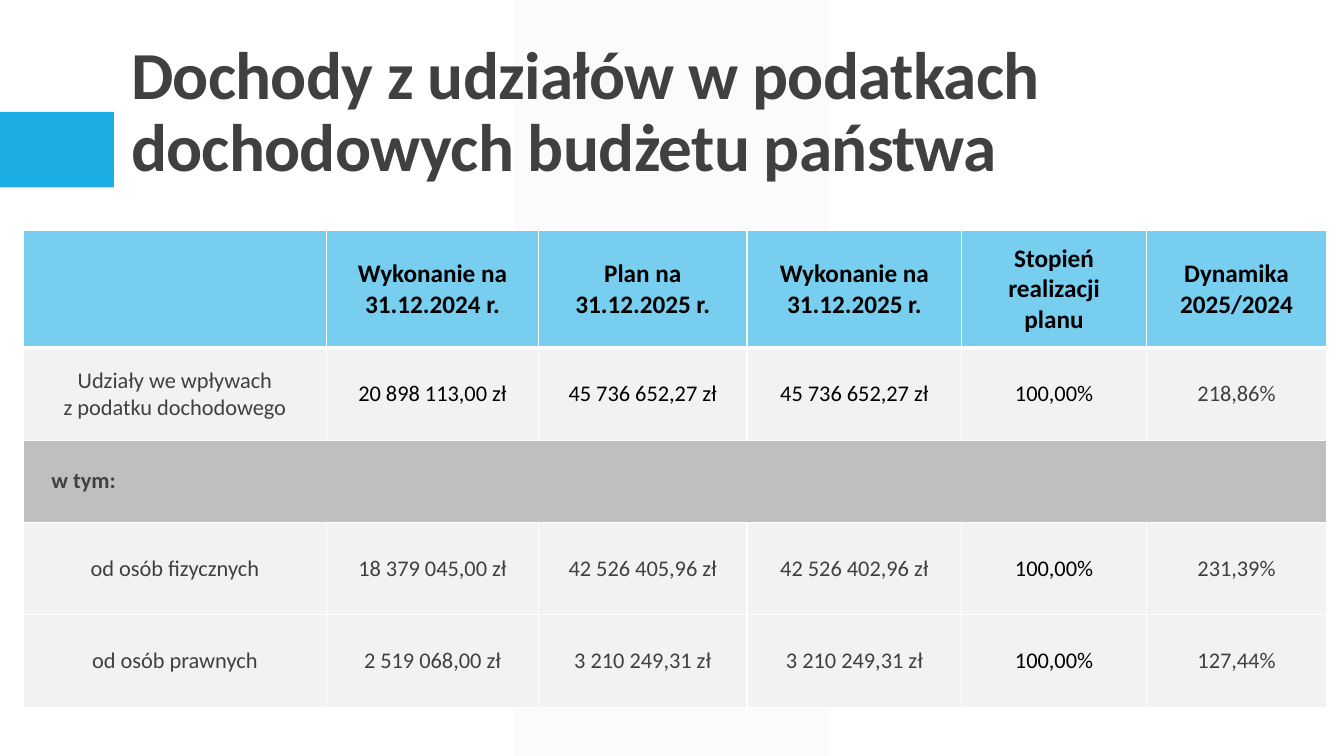
"""Build the slide on municipal income from shares in state income taxes."""
from dataclasses import dataclass

from pptx import Presentation
from pptx.dml.color import RGBColor
from pptx.enum import shapes, text
from pptx.oxml import ns, xmlchemy
from pptx.util import Inches, Pt


@dataclass(frozen=True)
class Theme:
    font: str = "Calibri"
    title_size: int = 48
    header_size: int = 18
    body_size: int = 16
    dark: str = "404040"
    black: str = "000000"
    white: str = "FFFFFF"
    accent: str = "1CADE4"
    header: str = "77CEEF"
    light: str = "F2F2F2"
    section: str = "BFBFBF"


THEME = Theme()
HEADER_ROW, TOTAL_ROW, SECTION_ROW = 0, 1, 2
REALIZATION_COLUMN = 4
COLUMN_WIDTHS = [3.01, 2.1, 2.07, 2.13, 1.83, 1.79]
ROW_HEIGHTS = [1.16, 0.92, 0.81, 0.92, 0.92]
ROWS = [
    ["", "Wykonanie na 31.12.2024 r.", "Plan na 31.12.2025 r.",
     "Wykonanie na 31.12.2025 r.", "Stopień realizacji planu", "Dynamika\n2025/2024"],
    ["Udziały we wpływach\vz podatku dochodowego", "20 898 113,00 zł",
     "45 736 652,27 zł", "45 736 652,27 zł", "100,00%", "218,86%"],
    ["w tym:", "", "", "", "", ""],
    ["od osób fizycznych", "18 379 045,00 zł", "42 526 405,96 zł",
     "42 526 402,96 zł", "100,00%", "231,39%"],
    ["od osób prawnych", "2 519 068,00 zł", "3 210 249,31 zł",
     "3 210 249,31 zł", "100,00%", "127,44%"],
]


def add_child(parent, tag, **attributes):
    child = xmlchemy.OxmlElement(tag)
    for name, value in attributes.items():
        child.set(name, str(value))
    parent.append(child)
    return child


def set_font(paragraph, size, color, bold):
    font = paragraph.font
    font.name, font.size, font.bold = THEME.font, Pt(size), bold
    font.color.rgb = RGBColor.from_string(color)


def add_block(slide, preset, left, top, width, height, color):
    shape = slide.shapes.add_shape(
        preset, Inches(left), Inches(top), Inches(width), Inches(height))
    shape.shadow.inherit = False
    shape.fill.solid()
    shape.fill.fore_color.rgb = RGBColor.from_string(color)
    shape.line.fill.background()
    return shape


def add_background(slide):
    band = add_block(slide, shapes.MSO_SHAPE.PARALLELOGRAM,
                     5.1, 0, 3.12, 7.5, THEME.light)
    band.adjustments[0] = 0
    color = band._element.spPr.find(".//" + ns.qn("a:srgbClr"))
    add_child(color, "a:alpha", val=30000)
    add_block(slide, shapes.MSO_SHAPE.RECTANGLE, 0, 1.11, 1.13, 0.75, THEME.accent)


def place_title(slide, wording):
    title = slide.shapes.title
    slide.shapes._spTree.append(title._element)
    title.left, title.top = Inches(1.2), Inches(0.31)
    title.width, title.height = Inches(11), Inches(1.59)
    frame = title.text_frame
    frame.text = wording
    frame.word_wrap = True
    frame.auto_size = text.MSO_AUTO_SIZE.NONE
    frame.vertical_anchor = text.MSO_ANCHOR.BOTTOM
    paragraph = frame.paragraphs[0]
    paragraph.alignment = text.PP_ALIGN.LEFT
    paragraph.line_spacing = 0.9
    set_font(paragraph, THEME.title_size, THEME.dark, True)
    paragraph.runs[0]._r.get_or_add_rPr().set("spc", "-50")


def set_borders(cell, top, bottom):
    properties = cell._tc.get_or_add_tcPr()
    for side, width in (("L", 1), ("R", 1), ("T", top), ("B", bottom)):
        line = add_child(properties, f"a:ln{side}", w=Pt(width))
        add_child(add_child(line, "a:solidFill"), "a:srgbClr", val=THEME.white)


def cell_style(row, column):
    """Return fill, text size, text colour and boldness for a table position."""
    if row == HEADER_ROW:
        return THEME.header, THEME.header_size, THEME.black, True
    if row == SECTION_ROW:
        return THEME.section, THEME.body_size, THEME.dark, True
    is_black = column == REALIZATION_COLUMN or (
        row == TOTAL_ROW and 0 < column < REALIZATION_COLUMN)
    color = THEME.black if is_black else THEME.dark
    return THEME.light, THEME.body_size, color, False


def fill_cell(cell, row, column, wording):
    fill, size, color, bold = cell_style(row, column)
    set_borders(cell, top=3 if row == TOTAL_ROW else 1,
                bottom=3 if row == HEADER_ROW else 1)
    cell.fill.solid()
    cell.fill.fore_color.rgb = RGBColor.from_string(fill)
    cell.margin_left = cell.margin_right = Inches(0.28)
    cell.margin_top = cell.margin_bottom = Inches(0.08)
    cell.vertical_anchor = text.MSO_ANCHOR.MIDDLE
    cell.text_frame.text = wording
    for paragraph in cell.text_frame.paragraphs:
        paragraph.alignment = (text.PP_ALIGN.LEFT if row == SECTION_ROW
                               else text.PP_ALIGN.CENTER)
        set_font(paragraph, size, color, bold)


def add_income_table(slide):
    table = slide.shapes.add_table(
        len(ROW_HEIGHTS), len(COLUMN_WIDTHS), Inches(0.23), Inches(2.29),
        Inches(sum(COLUMN_WIDTHS)), Inches(sum(ROW_HEIGHTS))).table
    table.horz_banding = False
    for column, width in zip(table.columns, COLUMN_WIDTHS):
        column.width = Inches(width)
    for row, height in zip(table.rows, ROW_HEIGHTS):
        row.height = Inches(height)
    for row, wordings in enumerate(ROWS):
        for column, wording in enumerate(wordings):
            fill_cell(table.cell(row, column), row, column, wording)
    last_column = len(COLUMN_WIDTHS) - 1
    table.cell(SECTION_ROW, 0).merge(table.cell(SECTION_ROW, last_column))


def main():
    presentation = Presentation()
    presentation.slide_width = Inches(13.33)
    presentation.slide_height = Inches(7.5)
    slide = presentation.slides.add_slide(presentation.slide_layouts[5])
    add_background(slide)
    place_title(slide, "Dochody z udziałów w podatkach dochodowych budżetu państwa")
    add_income_table(slide)
    presentation.save("out.pptx")


if __name__ == "__main__":
    main()
